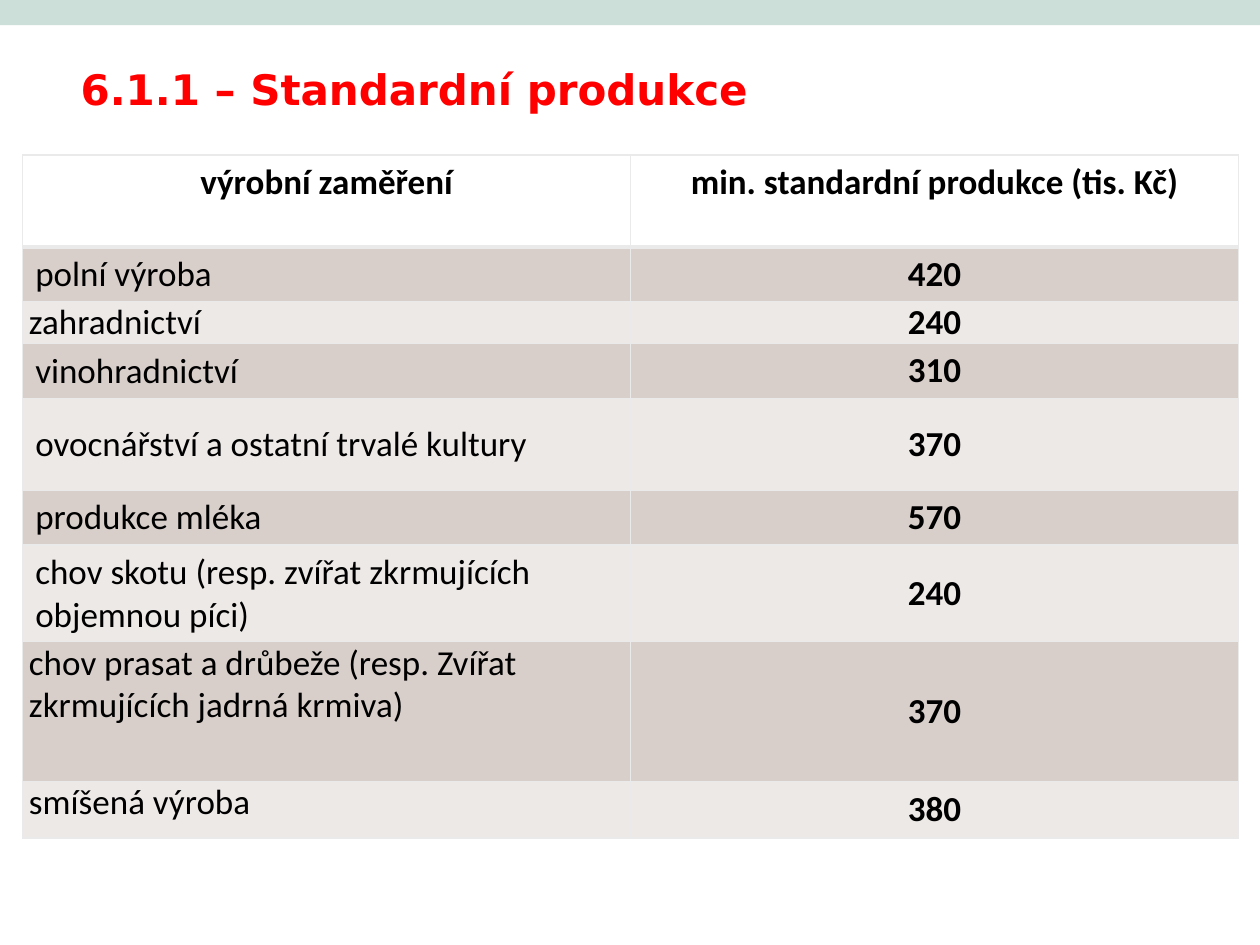
from dataclasses import dataclass

from lxml import etree
from pptx import Presentation
from pptx.dml.color import RGBColor
from pptx.enum.shapes import MSO_SHAPE
from pptx.enum.text import MSO_ANCHOR, PP_ALIGN
from pptx.oxml.ns import qn
from pptx.util import Inches, Pt

LEFT, CENTER = PP_ALIGN.LEFT, PP_ALIGN.CENTER
TOP, MIDDLE, BOTTOM = MSO_ANCHOR.TOP, MSO_ANCHOR.MIDDLE, MSO_ANCHOR.BOTTOM
RECTANGLE = MSO_SHAPE.RECTANGLE


@dataclass(frozen=True)
class Theme:
    title_font: str = "DejaVu Sans"
    body_font: str = "Calibri"
    title_size: int = 24
    body_size: int = 20
    title_color: str = "FF0000"
    text_color: str = "000000"
    strip: str = "CCDFD8"
    header_fill: str = "FFFFFF"
    band_fills: tuple = ("D8CFCB", "EDE9E7")
    border: str = "EAEAEA"
    border_width: int = 1
    header_rule: int = 3


# Cell and box margins: horizontal, vertical
WIDE = (0.1, 0.05)
NARROW = (0.05, 0)
TITLE_MARGINS = (0.14, 0.09)

HEADERS = ("výrobní zaměření", "min. standardní produkce (tis. Kč)")
HEADER_HEIGHT = 0.73

# Label, value, row height, label margins, label anchor, value margins
ROWS = [
    ("polní výroba", "420", 0.41, WIDE, TOP, WIDE),
    ("zahradnictví", "240", 0.33, NARROW, MIDDLE, NARROW),
    ("vinohradnictví", "310", 0.41, WIDE, MIDDLE, NARROW),
    ("ovocnářství a ostatní trvalé kultury", "370", 0.73, WIDE, MIDDLE, NARROW),
    ("produkce mléka", "570", 0.41, WIDE, MIDDLE, NARROW),
    ("chov skotu (resp. zvířat zkrmujících objemnou píci)", "240", 0.73,
     WIDE, MIDDLE, NARROW),
    ("chov prasat a drůbeže (resp. Zvířat zkrmujících jadrná krmiva)", "370", 1.11,
     NARROW, TOP, NARROW),
    ("smíšená výroba", "380", 0.45, NARROW, TOP, NARROW),
]


def write_text(text_frame, text, *, font, size, color, bold=False, align=LEFT):
    paragraph = text_frame.paragraphs[0]
    paragraph.alignment = align
    run = paragraph.add_run()
    run.text = text
    run.font.name = font
    run.font.size = Pt(size)
    run.font.bold = bold
    run.font.color.rgb = RGBColor.from_string(color)


def set_margins(target, margins):
    horizontal, vertical = margins
    target.margin_left = target.margin_right = Inches(horizontal)
    target.margin_top = target.margin_bottom = Inches(vertical)


def set_borders(cell, color, widths):
    """Draw the left, right, top and bottom lines, which must precede the fill."""
    properties = cell._tc.get_or_add_tcPr()
    for index, (side, width) in enumerate(zip("LRTB", widths)):
        line = etree.Element(qn(f"a:ln{side}"), w=str(Pt(width)))
        fill = etree.SubElement(line, qn("a:solidFill"))
        etree.SubElement(fill, qn("a:srgbClr"), val=color)
        properties.insert(index, line)


class SlideBuilder:
    def __init__(self, slide, theme):
        self.slide = slide
        self.theme = theme

    def strip(self, left, top, width, height):
        shape = self.slide.shapes.add_shape(
            RECTANGLE, Inches(left), Inches(top), Inches(width), Inches(height))
        shape.shadow.inherit = False
        shape.fill.solid()
        shape.fill.fore_color.rgb = RGBColor.from_string(self.theme.strip)
        shape.line.fill.background()

    def title(self, text, left, top, width, height):
        box = self.slide.shapes.add_textbox(
            Inches(left), Inches(top), Inches(width), Inches(height))
        text_frame = box.text_frame
        text_frame.word_wrap = False
        text_frame.vertical_anchor = BOTTOM
        set_margins(text_frame, TITLE_MARGINS)
        write_text(text_frame, text, font=self.theme.title_font,
                   size=self.theme.title_size, color=self.theme.title_color, bold=True)

    def cell(self, cell, text, fill, margins, anchor, borders, bold=True, align=CENTER):
        set_margins(cell, margins)
        cell.vertical_anchor = anchor
        cell.fill.solid()
        cell.fill.fore_color.rgb = RGBColor.from_string(fill)
        set_borders(cell, self.theme.border, borders)
        write_text(cell.text_frame, text, font=self.theme.body_font,
                   size=self.theme.body_size, color=self.theme.text_color,
                   bold=bold, align=align)

    def table(self, left, top, width):
        theme = self.theme
        heights = [HEADER_HEIGHT] + [row[2] for row in ROWS]
        table = self.slide.shapes.add_table(
            len(heights), len(HEADERS), Inches(left), Inches(top),
            Inches(width), Inches(sum(heights))).table
        table.first_row = True
        table.horz_banding = False
        for row, height in zip(table.rows, heights):
            row.height = Inches(height)

        # Header row
        thin, thick = theme.border_width, theme.header_rule
        for column, text in enumerate(HEADERS):
            self.cell(table.cell(0, column), text, theme.header_fill, WIDE, TOP,
                      (thin, thin, thin, thick))

        # Banded body rows
        for index, row in enumerate(ROWS):
            label, value, _, label_margins, label_anchor, value_margins = row
            fill = theme.band_fills[index % 2]
            borders = (thin, thin, thin if index else thick, thin)
            self.cell(table.cell(index + 1, 0), label, fill, label_margins,
                      label_anchor, borders, bold=False, align=LEFT)
            self.cell(table.cell(index + 1, 1), value, fill, value_margins,
                      MIDDLE, borders)


def main():
    presentation = Presentation()
    presentation.slide_width = Inches(10)
    presentation.slide_height = Inches(7.5)
    slide = presentation.slides.add_slide(presentation.slide_layouts[6])
    builder = SlideBuilder(slide, Theme())
    builder.strip(0, 0, 10, 0.2)
    builder.title("6.1.1 – Standardní produkce", 0.5, 0.4, 5.66, 0.59)
    builder.table(0.18, 1.23, 9.65)
    presentation.save("out.pptx")


if __name__ == "__main__":
    main()
